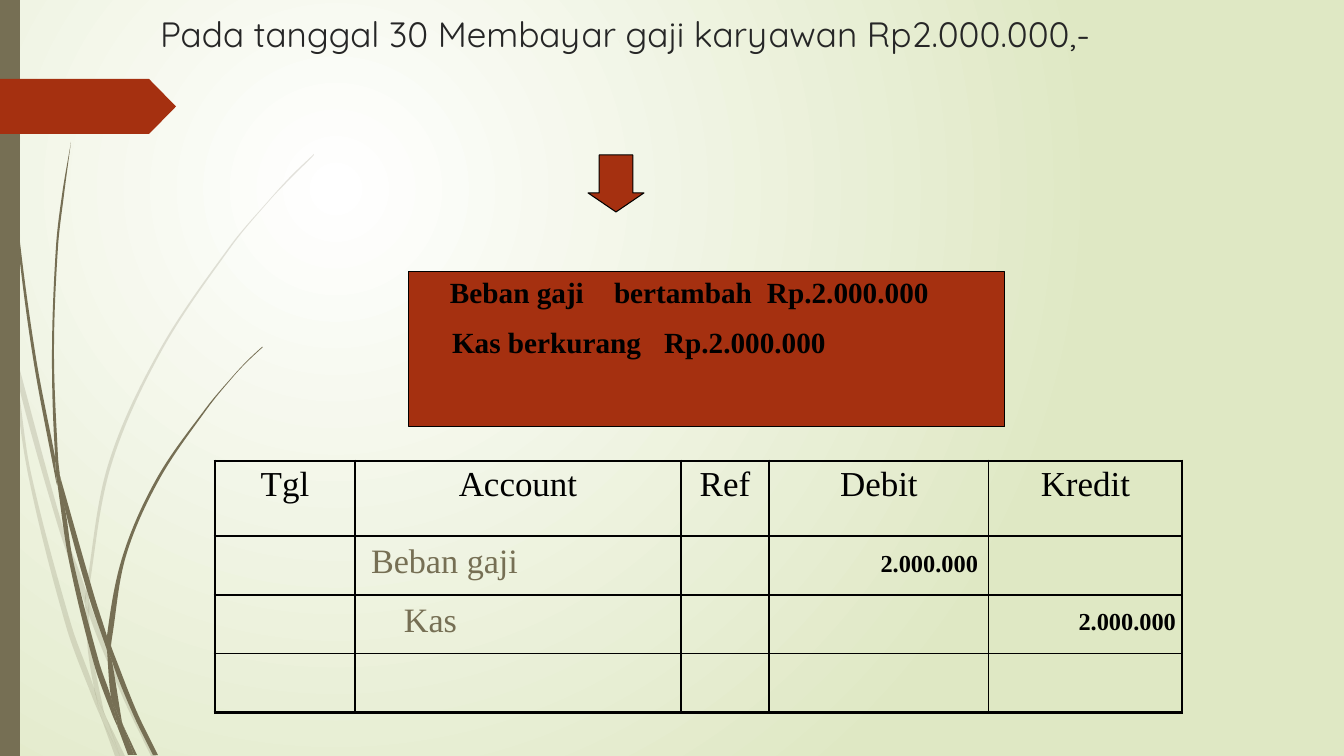
import math

from lxml import etree
from pptx import Presentation
from pptx import util as u
from pptx.dml.color import RGBColor
from pptx.enum import shapes, text
from pptx.oxml import parse_xml
from pptx.oxml.ns import nsdecls, qn

PX = 914400 / 100.8
SLIDE = (1344, 756)
COLORS = {"white": "FFFFFF", "meadow": "DFE8C4", "olive": "766F54",
          "rust": "A53010", "black": "000000", "title": "262626"}
SERIF = "Times New Roman"

PALE_GRASS = [
    [(11, 353), (9, 325), (0, 284), (0, 301), (10, 347)],
    [(58, 526), (85, 604), (86, 591), (62, 524), (14, 348), (17, 379)],
    [(93, 612), (89, 601), (89, 615), (124, 700), (151, 756), (156, 756), (128, 698)],
    [(120, 756), (125, 756), (106, 717)],
    [(94, 688), (71, 624), (31, 473), (17, 379), (11, 353), (28, 474), (66, 626),
     (93, 699), (102, 720), (100, 713)],
    [(85, 604), (88, 651), (94, 688), (97, 698), (106, 717), (104, 712), (92, 651),
     (89, 615), (89, 613)],
    [(89, 589), (111, 466), (161, 352), (231, 247), (270, 200), (292, 177), (314, 155),
     (314, 154), (291, 176), (270, 199), (230, 246), (159, 351), (108, 465), (86, 589),
     (86, 591), (89, 601)],
    [(102, 720), (115, 756), (120, 756)],
    [(89, 613), (89, 615), (89, 601), (86, 591), (85, 604)],
    [(97, 698), (94, 688), (100, 713), (102, 720), (120, 756), (106, 717)],
]
SOLID_GRASS = [
    [(7, 111), (17, 235), (33, 358), (56, 481), (57, 485), (55, 461), (55, 457),
     (36, 358), (19, 234), (8, 110), (5, 48), (4, 0), (3, 0), (4, 48)],
    [(89, 597), (107, 650), (107, 638), (107, 636), (94, 595), (60, 476), (65, 509)],
    [(114, 654), (111, 646), (112, 661), (133, 714), (153, 755), (158, 755), (137, 712)],
    [(111, 697), (99, 662), (73, 560), (65, 509), (57, 481), (69, 561), (94, 664),
     (112, 714), (118, 728), (117, 723)],
    [(60, 476), (58, 457), (54, 352), (58, 247), (64, 195), (71, 142), (62, 195),
     (56, 247), (52, 352), (55, 453)],
    [(134, 755), (137, 755), (123, 725)],
    [(57, 481), (65, 509), (60, 476), (55, 453), (55, 457)],
    [(112, 638), (126, 556), (159, 480), (207, 409), (233, 377), (247, 362), (263, 347),
     (262, 347), (247, 361), (233, 376), (206, 408), (157, 478), (123, 555), (107, 636),
     (111, 646)],
    [(118, 728), (128, 755), (132, 755)],
    [(107, 650), (111, 697), (117, 712), (123, 725), (122, 722), (112, 661), (110, 656)],
    [(107, 650), (110, 656), (112, 661), (111, 646), (107, 636), (107, 638)],
    [(117, 712), (111, 697), (117, 723), (118, 728), (131, 755), (134, 755), (123, 725)],
]
PRESETS = [
    ("RECTANGLE", (0, 0, 20, 756), "olive", False, []),
    ("PENTAGON", (0, 79, 176, 55), "rust", False, [0.49]),
    ("DOWN_ARROW", (588, 155, 56, 57), "rust", True, [0.6, 0.34]),
    ("RECTANGLE", (409, 272, 596, 155), "rust", True, []),
]
TABLE_ORIGIN = (215, 461)
COLUMNS = [140, 326, 88, 220, 193]
ROWS = [75, 59, 59, 59]
HEADINGS = ["Tgl", "Account", "Ref", "Debit", "Kredit"]
LABELS = [
    ("Pada tanggal 30 Membayar gaji karyawan Rp2.000.000,-", (151, 8, 1054, 101),
     "Quicksand", 25.1, "title", False, "LEFT", "TOP", []),
    ("Beban gaji\tbertambah\tRp.2.000.000", (441, 270, 502, 44),
     SERIF, 20.9, "black", True, "LEFT", "TOP", [164, 317]),
    ("Kas berkurang\tRp.2.000.000", (443, 320, 395, 44),
     SERIF, 20.9, "black", True, "LEFT", "TOP", [212]),
    ("Beban gaji", (362, 549, 248, 21), SERIF, 24.4, "olive", False, "LEFT", "MIDDLE", []),
    ("2.000.000", (870, 544, 117, 38), SERIF, 17.4, "black", True, "RIGHT", "TOP", []),
    ("Kas", (395, 605, 290, 28), SERIF, 24.4, "olive", False, "LEFT", "MIDDLE", []),
    ("2.000.000", (1068, 602, 117, 38), SERIF, 17.4, "black", True, "RIGHT", "TOP", []),
]


def emu(px):
    return u.Emu(round(px * PX))


def box(px_box):
    return [emu(value) for value in px_box]


def color(name):
    return RGBColor.from_string(COLORS[name])


def set_font(paragraph, name, size, shade, bold=False):
    font = paragraph.font
    font.name, font.size, font.bold = name, u.Pt(size), bold
    font.color.rgb = color(shade)


def paint(shape, shade, outlined=False):
    shape.shadow.inherit = False
    shape.fill.solid()
    shape.fill.fore_color.rgb = color(shade)
    if outlined:
        shape.line.color.rgb = color("black")
        shape.line.width = u.Pt(0.75)
    else:
        shape.line.fill.background()


def handles(before, point, after):
    arriving = math.atan2(point[1] - before[1], point[0] - before[0])
    leaving = math.atan2(after[1] - point[1], after[0] - point[0])
    if math.cos(leaving - arriving) > 0.7:
        arriving = leaving = math.atan2(after[1] - before[1], after[0] - before[0])
    back, ahead = math.dist(before, point) / 3, math.dist(point, after) / 3
    return ((point[0] - back * math.cos(arriving), point[1] - back * math.sin(arriving)),
            (point[0] + ahead * math.cos(leaving), point[1] + ahead * math.sin(leaving)))


def bend_edges(blade):
    outline = blade.element.find(".//" + qn("a:path"))
    points = [(int(pt.get("x")), int(pt.get("y"))) for pt in outline.iter(qn("a:pt"))][:-1]
    count = len(points)
    controls = [handles(points[i - 1], points[i], points[(i + 1) % count])
                for i in range(count)]
    for i, line in enumerate(outline.findall(qn("a:lnTo"))):
        end = (i + 1) % count
        curve = etree.Element(qn("a:cubicBezTo"))
        for x, y in (controls[i][1], controls[end][0], points[end]):
            etree.SubElement(curve, qn("a:pt"), x=str(round(x)), y=str(round(y)))
        outline.replace(line, curve)


def add_grass(slide, outlines, alpha):
    group = slide.shapes.add_group_shape()
    for outline in outlines:
        points = [tuple(box(point)) for point in outline]
        builder = group.shapes.build_freeform(*points[0], scale=1.0)
        builder.add_line_segments(points[1:] + points[:1], close=True)
        blade = builder.convert_to_shape()
        bend_edges(blade)
        paint(blade, "olive")
        if alpha < 100:
            shade = blade.element.spPr.find(qn("a:solidFill"))[0]
            etree.SubElement(shade, qn("a:alpha"), val=str(alpha * 1000))


def add_background(slide):
    fill = slide.background.fill
    fill.gradient()
    for stop, shade in zip(fill.gradient_stops, ("white", "meadow")):
        stop.color.rgb = color(shade)
    gradient = slide.element.find(".//" + qn("a:gradFill"))
    gradient.replace(gradient.find(qn("a:lin")), parse_xml(
        f'<a:path {nsdecls("a")} path="circle">'
        '<a:fillToRect l="50000" t="50000" r="100000" b="100000"/></a:path>'))


def add_borders(cell, outer):
    properties = cell._tc.get_or_add_tcPr()
    for index, side in enumerate("LRTB"):
        width = u.Pt(2.25 if outer[side] else 1)
        properties.insert(index, parse_xml(
            f'<a:ln{side} {nsdecls("a")} w="{width}"><a:solidFill>'
            f'<a:srgbClr val="{COLORS["black"]}"/></a:solidFill></a:ln{side}>'))


def add_journal(slide):
    journal = slide.shapes.add_table(
        len(ROWS), len(COLUMNS), *box((*TABLE_ORIGIN, sum(COLUMNS), sum(ROWS)))).table
    journal.first_row = journal.horz_banding = False
    for column, width in zip(journal.columns, COLUMNS):
        column.width = emu(width)
    for row, height in zip(journal.rows, ROWS):
        row.height = emu(height)
    for r in range(len(ROWS)):
        for c in range(len(COLUMNS)):
            cell = journal.cell(r, c)
            cell.fill.background()
            add_borders(cell, {"L": c == 0, "R": c == len(COLUMNS) - 1,
                               "T": r == 0, "B": r == len(ROWS) - 1})
            if r == 0:
                cell.margin_top = emu(4)
                cell.text = HEADINGS[c]
                paragraph = cell.text_frame.paragraphs[0]
                paragraph.alignment = text.PP_ALIGN.CENTER
                set_font(paragraph, SERIF, 25, "black")


def add_label(slide, words, place, name, size, shade, bold, align, anchor, tabs):
    frame = slide.shapes.add_textbox(*box(place)).text_frame
    frame.word_wrap = align == "LEFT"
    frame.vertical_anchor = text.MSO_ANCHOR[anchor]
    frame.margin_top = frame.margin_bottom = emu(4)
    frame.margin_left = frame.margin_right = emu(9)
    paragraph = frame.paragraphs[0]
    paragraph.text = words
    paragraph.alignment = text.PP_ALIGN[align]
    set_font(paragraph, name, size, shade, bold)
    if tabs:
        stops = "".join(f'<a:tab pos="{emu(tab)}" algn="l"/>' for tab in tabs)
        paragraph._p.get_or_add_pPr().insert(0, parse_xml(
            f'<a:tabLst {nsdecls("a")}>{stops}</a:tabLst>'))


def main():
    presentation = Presentation()
    presentation.slide_width, presentation.slide_height = box(SLIDE)
    slide = presentation.slides.add_slide(presentation.slide_layouts[6])
    add_background(slide)
    add_grass(slide, PALE_GRASS, 20)
    add_grass(slide, SOLID_GRASS, 100)
    for kind, place, shade, outlined, adjustments in PRESETS:
        shape = slide.shapes.add_shape(shapes.MSO_SHAPE[kind], *box(place))
        paint(shape, shade, outlined)
        for index, value in enumerate(adjustments):
            shape.adjustments[index] = value
    add_journal(slide)
    for label in LABELS:
        add_label(slide, *label)
    presentation.save("out.pptx")


if __name__ == "__main__":
    main()
